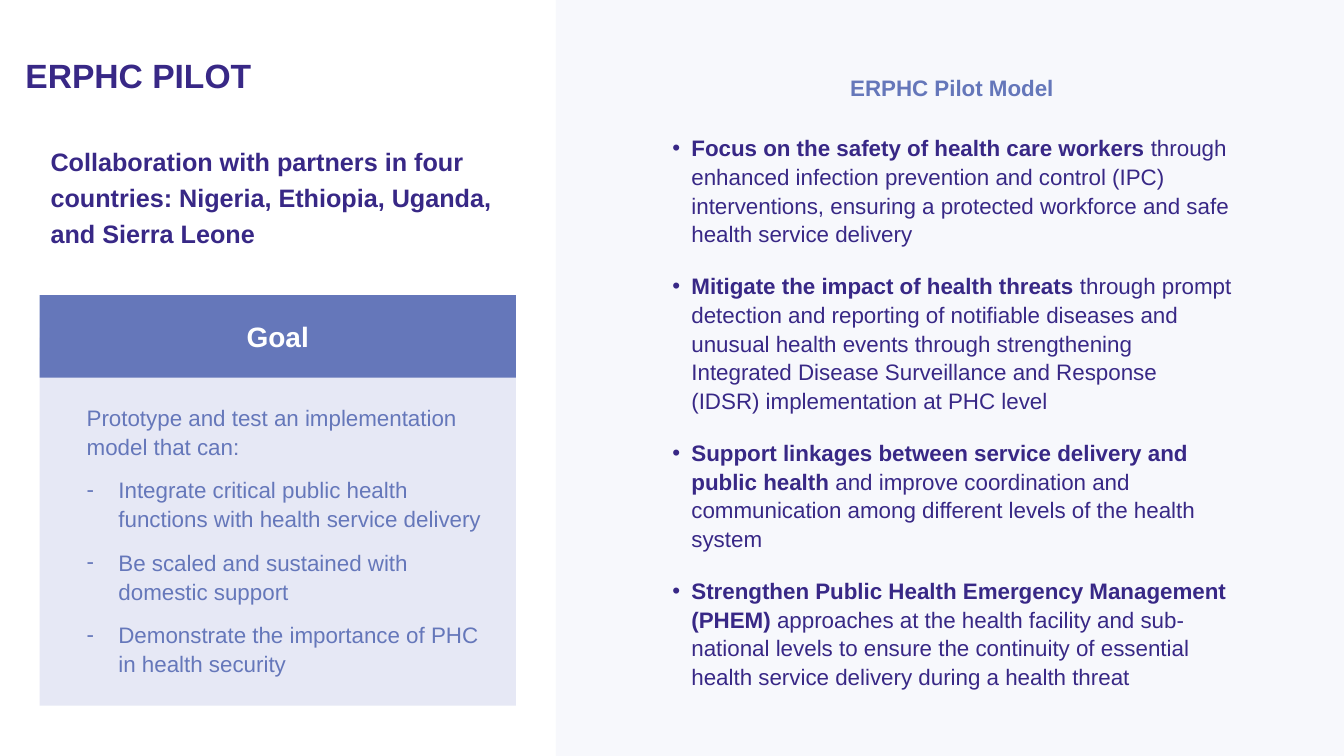
"""Build the ERPHC pilot slide: partners and goal beside the pilot model."""
import lxml.etree
import pptx
import pptx.dml.color
import pptx.enum.shapes
import pptx.enum.text
import pptx.oxml.ns
import pptx.util

Cm = pptx.util.Cm
Pt = pptx.util.Pt
ALIGN = pptx.enum.text.PP_ALIGN
ANCHOR = pptx.enum.text.MSO_ANCHOR

COLOURS = {"navy": "382886", "blue": "6577BA", "lavender": "E6E8F5",
           "mist": "F7F8FC", "white": "FFFFFF"}
FONT = "Arial"

TITLE = "ERPHC PILOT"
PARTNERS = ("Collaboration with partners in four countries: "
            "Nigeria, Ethiopia, Uganda, and Sierra Leone")
GOAL_HEADING = "Goal"
GOAL_INTRO = "Prototype and test an implementation model that can:"
GOALS = [
    "Integrate critical public health functions with health service delivery",
    "Be scaled and sustained with domestic support",
    "Demonstrate the importance of PHC in health security",
]
MODEL_HEADING = "ERPHC Pilot Model"
MODEL = [
    ("Focus on the safety of health care workers ",
     "through enhanced infection prevention and control (IPC) interventions, "
     "ensuring a protected workforce and safe health service delivery"),
    ("Mitigate the impact of health threats ",
     "through prompt detection and reporting of notifiable diseases and unusual "
     "health events through strengthening Integrated Disease Surveillance and "
     "Response (IDSR) implementation at PHC level"),
    ("Support linkages between service delivery and public health ",
     "and improve coordination and communication among different levels of the "
     "health system"),
    ("Strengthen Public Health Emergency Management (PHEM) ",
     "approaches at the health facility and sub-national levels to ensure the "
     "continuity of essential health service delivery during a health threat"),
]

SLIDE_WIDTH, SLIDE_HEIGHT = 33.87, 19.05
PANEL_LEFT = 14.01
MODEL_LEFT, MODEL_WIDTH, MODEL_TOP = 16.69, 14.6, 1.7
MODEL_LIST_TOP = MODEL_TOP + 1.51
CARD_LEFT, CARD_WIDTH = 1, 12
BAND_TOP, BAND_HEIGHT = 7.44, 2.08


def place(shape, left, top, width, height):
    """Position a shape by centimetres."""
    shape.left, shape.top = Cm(left), Cm(top)
    shape.width, shape.height = Cm(width), Cm(height)


def set_bullet(paragraph, character, indent):
    """Give a paragraph its bullet character and hanging indent."""
    properties = paragraph._p.get_or_add_pPr()
    hanging = Cm(indent) if character else 0
    properties.set("marL", str(hanging))
    properties.set("indent", str(-hanging))
    tag = pptx.oxml.ns.qn("a:buChar" if character else "a:buNone")
    bullet = lxml.etree.SubElement(properties, tag)
    if character:
        bullet.set("char", character)


def write_text(shape, paragraphs, size, colour, bold=False, align=ALIGN.LEFT,
               anchor=ANCHOR.TOP, line=1.0, gap=0, indent=0, margins=None):
    """Fill a shape with (bullet, bold text, remaining text) paragraphs."""
    frame = shape.text_frame
    frame.word_wrap = True
    frame.auto_size = pptx.enum.text.MSO_AUTO_SIZE.NONE
    frame.vertical_anchor = anchor
    if margins is not None:
        frame.margin_left = frame.margin_right = frame.margin_top = Cm(margins)
    for number, (bullet, lead, rest) in enumerate(paragraphs):
        paragraph = frame.add_paragraph() if number else frame.paragraphs[0]
        set_bullet(paragraph, bullet, indent)
        paragraph.alignment = align
        paragraph.line_spacing = line
        paragraph.space_before = Pt(gap if number else 0)
        paragraph.space_after = Pt(0)
        for text, strong in ((lead, True), (rest, bold)):
            if text:
                run = paragraph.add_run()
                run.text = text
                run.font.name = FONT
                run.font.size = Pt(size)
                run.font.bold = strong
                run.font.color.rgb = pptx.dml.color.RGBColor.from_string(COLOURS[colour])


def add_rectangle(slide, depth, colour, *box):
    """Add a plain rectangle behind the text at the given depth."""
    shape = slide.shapes.add_shape(pptx.enum.shapes.MSO_SHAPE.RECTANGLE, 0, 0, 0, 0)
    place(shape, *box)
    shape.shadow.inherit = False
    shape.fill.solid()
    shape.fill.fore_color.rgb = pptx.dml.color.RGBColor.from_string(COLOURS[colour])
    shape.line.fill.background()
    shape.element.getparent().insert(2 + depth, shape.element)
    return shape


def main():
    """Lay out the slide and save it."""
    presentation = pptx.Presentation()
    presentation.slide_width = Cm(SLIDE_WIDTH)
    presentation.slide_height = Cm(SLIDE_HEIGHT)
    slide = presentation.slides.add_slide(
        presentation.slide_layouts.get_by_name("Comparison"))
    title, partners, goals, model_heading, model = slide.placeholders

    place(title, 0.64, 1.5, 29.21, 2.39)
    write_text(title, [("", TITLE, "")], 24, "navy", line=0.9, margins=0)

    place(partners, 1.02, 3.4, 12.01, 4.01)
    write_text(partners, [("", PARTNERS, "")], 18, "navy", line=1.2)

    place(goals, 1.93, 10, 10.64, 7.24)
    goal_paragraphs = [("", "", GOAL_INTRO)] + [("-", "", goal) for goal in GOALS]
    write_text(goals, goal_paragraphs, 16, "blue", line=Pt(20.8), gap=10, indent=0.8)

    place(model_heading, MODEL_LEFT, MODEL_TOP, MODEL_WIDTH, 1)
    write_text(model_heading, [("", MODEL_HEADING, "")], 16, "blue",
               align=ALIGN.CENTER, line=1.07)

    place(model, MODEL_LEFT, MODEL_LIST_TOP, MODEL_WIDTH, 14.5)
    write_text(model, [("•", lead, rest) for lead, rest in MODEL], 16, "navy",
               line=1.07, gap=16.5, indent=0.48)

    add_rectangle(slide, 0, "mist", PANEL_LEFT, 0, SLIDE_WIDTH - PANEL_LEFT, SLIDE_HEIGHT)
    add_rectangle(slide, 1, "lavender", CARD_LEFT, 8.51, CARD_WIDTH, 9.27)
    band = add_rectangle(slide, 2, "blue", CARD_LEFT, BAND_TOP, CARD_WIDTH, BAND_HEIGHT)
    write_text(band, [("", GOAL_HEADING, "")], 20, "white",
               align=ALIGN.CENTER, anchor=ANCHOR.MIDDLE)

    presentation.save("out.pptx")


if __name__ == "__main__":
    main()
